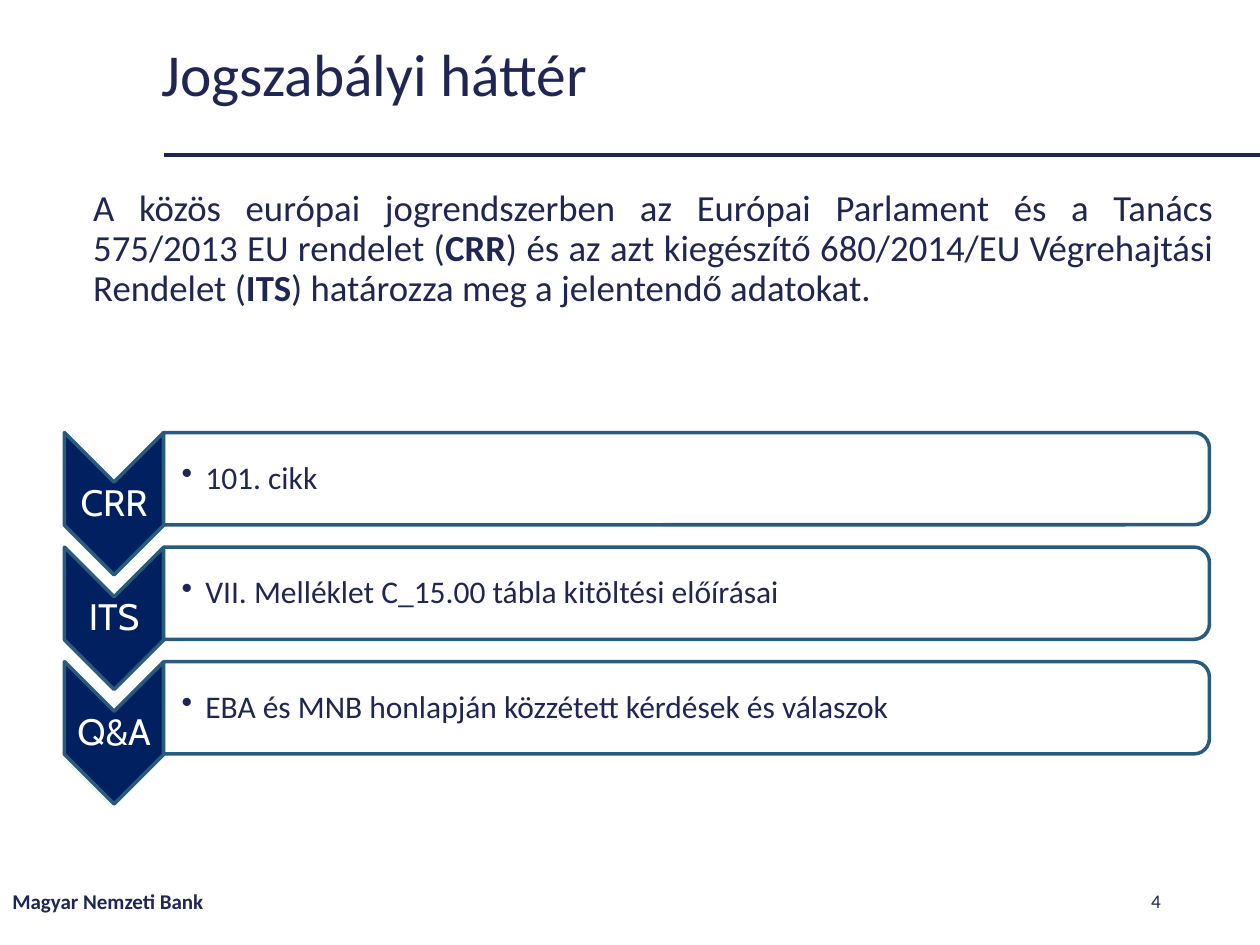
from lxml.etree import SubElement
from pptx import Presentation
from pptx.dml.color import RGBColor
from pptx.enum.shapes import MSO_CONNECTOR as Link, MSO_SHAPE as Form
from pptx.enum.text import MSO_ANCHOR as Anchor, PP_ALIGN as Align
from pptx.oxml.ns import qn
from pptx.util import Cm, Pt

INK = RGBColor(0x20, 0x26, 0x53)
RULE = RGBColor(0x1E, 0x24, 0x52)
NAVY = RGBColor(0x00, 0x20, 0x60)
EDGE = RGBColor(0x29, 0x5B, 0x7E)
WHITE = RGBColor(0xFF, 0xFF, 0xFF)

INTRO = [
    ("A közös európai jogrendszerben az Európai Parlament és a Tanács "
     "575/2013 EU rendelet (", False),
    ("CRR", True),
    (") és az azt kiegészítő 680/2014/EU Végrehajtási Rendelet (", False),
    ("ITS", True),
    (") határozza meg a jelentendő adatokat.", False),
]
ROWS = [
    ("CRR", "101. cikk"),
    ("ITS", "VII. Melléklet C_15.00 tábla kitöltési előírásai"),
    ("Q&A", "EBA és MNB honlapján közzétett kérdések és válaszok"),
]
TOP, PITCH = 8.72, 2.31


def add_text(slide, box, parts, size, color=INK, font="Calibri",
             align=Align.LEFT, anchor=Anchor.MIDDLE, space=0.9):
    """Add a wrapped text box of (text, bold) parts and return its frame."""
    frame = slide.shapes.add_textbox(*map(Cm, box)).text_frame
    frame.word_wrap = True
    frame.vertical_anchor = anchor
    para = frame.paragraphs[0]
    para.alignment = align
    para.line_spacing = space
    for text, bold in parts:
        run = para.add_run()
        run.text = text
        run.font.name = font
        run.font.size = Pt(size)
        run.font.bold = bold
        run.font.color.rgb = color
    return frame


def set_inset(frame, left):
    """Set a left inset in centimetres and thin insets elsewhere."""
    frame.margin_left = Cm(left)
    frame.margin_top = frame.margin_right = frame.margin_bottom = Cm(0.03)


def add_bullet(para):
    """Give a paragraph a hanging round bullet."""
    props = para._p.get_or_add_pPr()
    props.set("marL", str(Cm(0.48)))
    props.set("indent", str(-Cm(0.48)))
    SubElement(props, qn("a:buChar"), char="•")


def add_turned(slide, form, box, fill):
    """Add a shape turned by 90 degrees that fills the given upright box."""
    left, top, width, height = box
    shift = (width - height) / 2
    shape = slide.shapes.add_shape(
        form, Cm(left + shift), Cm(top - shift), Cm(height), Cm(width))
    shape.rotation = 90
    shape.shadow.inherit = False
    shape.fill.solid()
    shape.fill.fore_color.rgb = fill
    shape.line.color.rgb = EDGE
    shape.line.width = Pt(2)
    return shape


def add_row(slide, top, label, note):
    """Add a labelled chevron with its note panel."""
    add_turned(slide, Form.CHEVRON, (1.3, top, 2, 2.87), NAVY)
    frame = add_text(slide, (1.3, top + 1.02, 2, 0.86), [(label, False)], 21,
                     WHITE, "Cabin", Align.CENTER)
    set_inset(frame, 0.03)
    panel = add_turned(slide, Form.ROUND_2_SAME_RECTANGLE,
                       (3.3, top, 21.08, 1.86), WHITE)
    tint = panel.fill._xPr.find(".//" + qn("a:srgbClr"))
    SubElement(tint, qn("a:alpha"), val="90000")
    frame = add_text(slide, (3.3, top + 0.1, 21, 1.68), [(note, False)], 18)
    set_inset(frame, 0.36)
    add_bullet(frame.paragraphs[0])


def add_rule(slide):
    """Add the line under the title."""
    rule = slide.shapes.add_connector(
        Link.STRAIGHT, Cm(3.3), Cm(3.12), Cm(25.4), Cm(3.12))
    rule.line.color.rgb = RULE
    rule.line.width = Pt(2.25)
    SubElement(rule._element.spPr, qn("a:effectLst"))


def main():
    """Build the slide and save it."""
    deck = Presentation()
    deck.slide_width, deck.slide_height = Cm(25.4), Cm(19.05)
    slide = deck.slides.add_slide(deck.slide_layouts[6])
    add_rule(slide)
    add_text(slide, (3, 0.5, 20.7, 2.1), [("Jogszabályi háttér", False)], 34)
    add_text(slide, (1.63, 3.71, 23.08, 5), INTRO, 21,
             align=Align.JUSTIFY, anchor=Anchor.TOP)
    for i, (label, note) in reversed(list(enumerate(ROWS))):
        add_row(slide, TOP + i * PITCH, label, note)
    add_text(slide, (0, 17.65, 8.6, 1.02), [("Magyar Nemzeti Bank", True)],
             12, space=1.0)
    add_text(slide, (17.93, 17.65, 5.72, 1.02), [("4", False)], 11,
             align=Align.RIGHT, space=1.0)
    deck.save("out.pptx")


if __name__ == "__main__":
    main()
